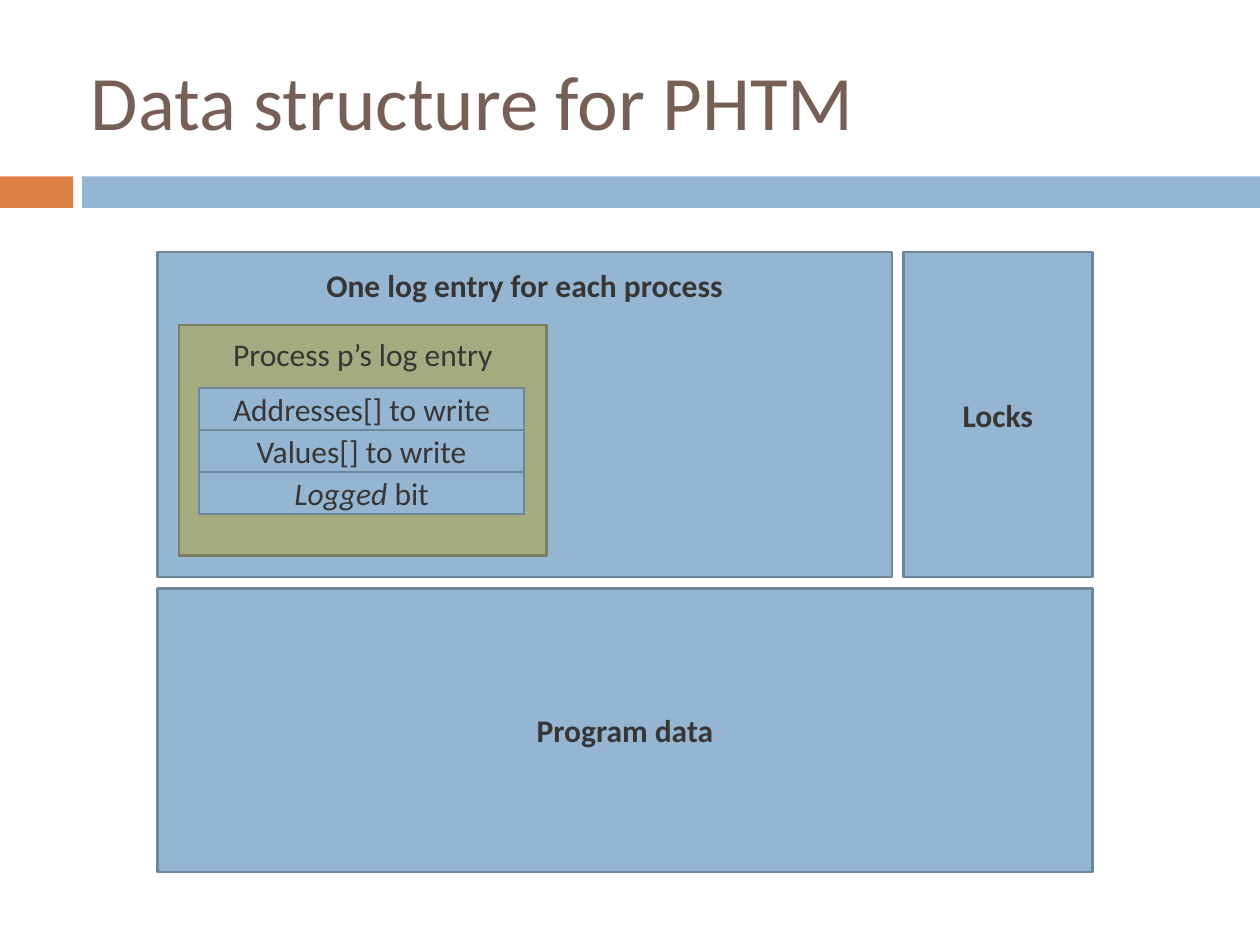
from dataclasses import dataclass

from pptx import Presentation
from pptx.dml.color import RGBColor as Rgb
from pptx.enum.shapes import MSO_SHAPE as Kind
from pptx.enum.text import MSO_ANCHOR as Anchor, PP_ALIGN as Align
from pptx.util import Inches, Pt

COLORS = {
    "white": "FFFFFF", "orange": "DD8047", "blue": "94B6D2",
    "edge": "6D879B", "green": "A5AB81", "moss": "7A7F5F",
    "dark": "383635", "brown": "775F55",
}


@dataclass
class Box:
    left: float
    top: float
    width: float
    height: float
    text: str = ""
    bold: bool = False
    lead: str = ""  # italic words before the text
    fill: str = "blue"
    line: str | None = "edge"
    inset: float | None = None  # top margin of text set at the top


def color(name: str) -> Rgb:
    return Rgb.from_string(COLORS[name])


def write(frame, text: str, *, lead="", size=18, bold=False, ink="dark",
          align=Align.CENTER, anchor=Anchor.MIDDLE, side=0.1, top=0.05) -> None:
    frame.word_wrap = True
    frame.vertical_anchor = anchor
    frame.margin_left = frame.margin_right = Inches(side)
    frame.margin_top, frame.margin_bottom = Inches(top), Inches(0.05)
    para = frame.paragraphs[0]
    para.alignment = align
    for part, slant in ((lead, True), (text, False)):
        if part:
            run = para.add_run()
            run.text = part
            font = run.font
            font.name, font.size = "Calibri", Pt(size)
            font.bold, font.italic = bold, slant
            font.color.rgb = color(ink)


def draw(slide, box: Box) -> None:
    shape = slide.shapes.add_shape(
        Kind.RECTANGLE, *map(Inches, (box.left, box.top, box.width, box.height)))
    shape.shadow.inherit = False
    shape.fill.solid()
    shape.fill.fore_color.rgb = color(box.fill)
    if box.line:
        shape.line.color.rgb = color(box.line)
        shape.line.width = Pt(1.5)
    else:
        shape.line.fill.background()
    if box.text:
        high = box.inset is not None
        write(shape.text_frame, box.text, lead=box.lead, bold=box.bold,
              anchor=Anchor.TOP if high else Anchor.MIDDLE,
              top=box.inset if high else 0.05)


def main() -> None:
    deck = Presentation()
    deck.slide_width, deck.slide_height = Inches(10), Inches(7.5)
    slide = deck.slides.add_slide(deck.slide_layouts[6])

    bands = [
        Box(0, 1.35, 10, 0.35, fill="white", line=None),
        Box(0, 1.4, 0.58, 0.25, fill="orange", line=None),
        Box(0.65, 1.4, 9.35, 0.25, line=None),
    ]
    areas = [
        Box(1.25, 2, 5.83, 2.58, "One log entry for each process",
            bold=True, inset=0.11),
        Box(7.17, 2, 1.5, 2.58, "Locks", bold=True),
        Box(1.25, 4.67, 7.42, 2.25, "Program data", bold=True),
        Box(1.42, 2.58, 2.92, 1.83, "Process p’s log entry",
            fill="green", line="moss", inset=0.08),
    ]
    fields = [("", "Addresses[] to write"), ("", "Values[] to write"),
              ("Logged", " bit")]
    step = 1 / 3
    rows = [Box(1.58, 3.08 + i * step, 2.58, step, text, lead=lead)
            for i, (lead, text) in enumerate(fields)]
    for box in bands + areas + rows:
        draw(slide, box)

    title = slide.shapes.add_textbox(
        Inches(0.67), Inches(0.25), Inches(8.92), Inches(1.08))
    write(title.text_frame, "Data structure for PHTM", size=44,
          ink="brown", align=Align.LEFT, side=0.05)

    deck.save("out.pptx")


if __name__ == "__main__":
    main()
